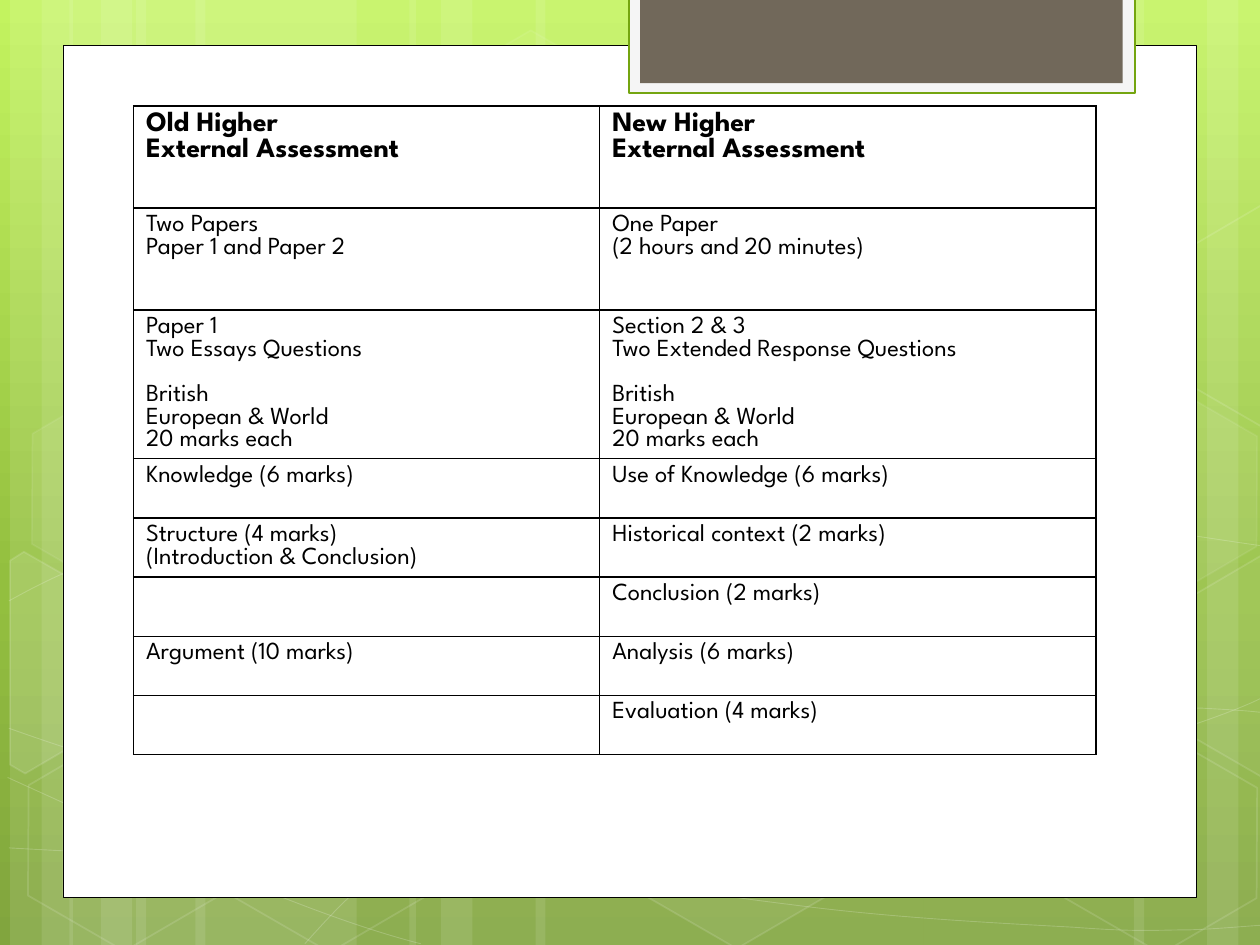
"""Build a slide that compares the old and new Higher external assessments."""
import copy
import dataclasses
import typing

import lxml.etree
import pptx
import pptx.dml.color
import pptx.enum.shapes
import pptx.oxml.ns
import pptx.util

Inches = pptx.util.Inches
Pt = pptx.util.Pt
qn = pptx.oxml.ns.qn
SHAPES = pptx.enum.shapes.MSO_SHAPE
Point = tuple[float, float]

COLOURS = {
    "white": "FFFFFF",
    "ink": "000000",
    "tab_rim": "F5F5F5",
    "tab_edge": "74A510",
    "tab": "71685A",
    "sky_top": "C3F35F",
    "sky_middle": "93BF3F",
    "sky_bottom": "81A53E",
}
FONT = "League Spartan"
WIDTH, HEIGHT = 10, 7.5
HEX_WIDTH, HEX_HEIGHT = 1.75, 1.52


@dataclasses.dataclass
class Paint:
    fill: str | None = None
    fill_alpha: int = 100
    line: str | None = None
    line_alpha: int = 100
    weight: float = 1


@dataclasses.dataclass
class Box:
    left: float
    top: float
    width: float
    height: float
    paint: Paint
    kind: typing.Any = SHAPES.RECTANGLE
    rotation: float = 0
    adjustments: tuple[float, ...] = ()


def rgb(name: str) -> pptx.dml.color.RGBColor:
    return pptx.dml.color.RGBColor.from_string(COLOURS[name])


def set_alpha(shape, query: str, percent: int) -> None:
    if percent < 100:
        for colour in shape.element.spPr.xpath(query):
            lxml.etree.SubElement(colour, qn("a:alpha")).set("val", str(percent * 1000))


def apply_paint(shape, paint: Paint) -> None:
    shape.shadow.inherit = False
    for fill, colour in ((shape.fill, paint.fill), (shape.line.fill, paint.line)):
        if colour:
            fill.solid()
            fill.fore_color.rgb = rgb(colour)
        else:
            fill.background()
    if paint.line:
        shape.line.width = Pt(paint.weight)
    set_alpha(shape, "a:solidFill/a:srgbClr", paint.fill_alpha)
    set_alpha(shape, "a:ln/a:solidFill/a:srgbClr", paint.line_alpha)


def draw_box(slide, box: Box) -> None:
    shape = slide.shapes.add_shape(
        box.kind, Inches(box.left), Inches(box.top), Inches(box.width), Inches(box.height))
    shape.rotation = box.rotation
    for index, value in enumerate(box.adjustments):
        shape.adjustments[index] = value
    apply_paint(shape, box.paint)


def draw_outline(slide, points: list[Point], paint: Paint, *, closed: bool):
    start, *rest = [(Inches(x), Inches(y)) for x, y in points]
    builder = slide.shapes.build_freeform(*start)
    builder.add_line_segments(rest, close=closed)
    shape = builder.convert_to_shape()
    apply_paint(shape, paint)
    return shape


def draw_curve(slide, knots: list[Point], paint: Paint) -> None:
    shape = draw_outline(slide, knots[::3], paint, closed=False)
    for index, straight in enumerate(shape.element.spPr.xpath(".//a:lnTo")):
        a, b, c, d = knots[3 * index:3 * index + 4]
        if a == b and c == d:
            continue
        bend = lxml.etree.Element(qn("a:cubicBezTo"))
        for x, y in (b, c, d):
            lxml.etree.SubElement(bend, qn("a:pt"), x=str(Inches(x) - shape.left),
                                  y=str(Inches(y) - shape.top))
        straight.getparent().replace(straight, bend)


def draw_background(slide) -> None:
    fill = slide.background.fill
    fill.gradient()
    fill.gradient_angle = 270
    stops = slide.element.find(".//" + qn("a:gsLst"))
    stops.append(copy.deepcopy(stops[-1]))
    levels = ((0, "sky_top"), (0.62, "sky_middle"), (1, "sky_bottom"))
    for stop, (position, colour) in zip(fill.gradient_stops, levels):
        stop.position = position
        stop.color.rgb = rgb(colour)


def write_lines(cell, lines: list[str], *, size: float, bold: bool, gap: float) -> None:
    frame = cell.text_frame
    gap_next = False
    paragraph = frame.paragraphs[0]
    paragraph.font.size = Pt(size)
    for index, line in enumerate(lines):
        if not line:
            gap_next = True
            continue
        if index:
            paragraph = frame.add_paragraph()
        run = paragraph.add_run()
        run.text = line
        run.font.name, run.font.size, run.font.bold = FONT, Pt(size), bold
        run.font.color.rgb = rgb("ink")
        if gap_next:
            paragraph.space_before = Pt(gap)
            gap_next = False


def draw_borders(cell, colour: str, weight: float) -> None:
    properties = cell._tc.get_or_add_tcPr()
    for index, side in enumerate(("lnL", "lnR", "lnT", "lnB")):
        border = lxml.etree.Element(qn(f"a:{side}"), w=str(Pt(weight)))
        solid = lxml.etree.SubElement(border, qn("a:solidFill"))
        lxml.etree.SubElement(solid, qn("a:srgbClr"), val=COLOURS[colour])
        properties.insert(index, border)


def draw_table(slide, rows: list[tuple[str, str]]) -> None:
    widths = (3.7, 3.94)
    heights = (0.81, 0.81, 1.16) + (0.47,) * 5
    table = slide.shapes.add_table(
        len(rows), len(widths), Inches(1.06), Inches(0.84),
        Inches(sum(widths)), Inches(sum(heights))).table
    table.first_row = table.horz_banding = False
    for column, width in zip(table.columns, widths):
        column.width = Inches(width)
    for index, (row, height, texts) in enumerate(zip(table.rows, heights, rows)):
        row.height = Inches(height)
        for cell, text in zip(row.cells, texts):
            cell.fill.background()
            draw_borders(cell, "ink", 1)
            header = index == 0
            write_lines(cell, text.split("\n"), size=16 if header else 14, bold=header, gap=13)


BANDS = [(1.08, 1.75), (0.08, 0.5), (0.33, 0.83), (1.55, 1.75), (0.55, 0.5), (0.8, 0.83),
         (7.33, 1.75), (9.58, 0.5), (9, 0.83), (4.25, 3.08), (3.25, 0.5), (3.5, 0.83)]
CURVES = [
    [(0.07, 6.73), (0.61, 6.76), (1.15, 6.79), (1.9, 6.78), (2.65, 6.77), (3.58, 6.75), (4.58, 6.65),
     (5.58, 6.55), (7, 6.36), (7.92, 6.17), (8.83, 5.98), (9.77, 5.68), (10.07, 5.51)],
    [(0.07, 4.77), (0.36, 4.61), (0.65, 4.46), (1.21, 4.31), (1.78, 4.16), (2.59, 3.94), (3.47, 3.87),
     (4.36, 3.8), (5.44, 3.79), (6.54, 3.87), (7.64, 3.95), (9.47, 4.26), (10.07, 4.34)],
    [(0.06, 6.17), (1.27, 6.72), (2.47, 7.27), (3.34, 7.49)],
    [(0.07, 5.78), (0.38, 5.89), (0.7, 6), (1.28, 6.16), (1.86, 6.31), (2.73, 6.56), (3.57, 6.73),
     (4.4, 6.9), (5.45, 7.08), (6.28, 7.18), (7.11, 7.29), (8, 7.33), (8.53, 7.36),
     (9.05, 7.4), (9.19, 7.38), (9.45, 7.38), (9.71, 7.37), (9.89, 7.35), (10.07, 7.34)],
    [(2.42, 7.49), (2.6, 7.29), (2.78, 7.09), (3.02, 6.91), (3.26, 6.73), (3.6, 6.53), (3.88, 6.39),
     (4.16, 6.25), (4.33, 6.19), (4.7, 6.09), (5.06, 5.99), (5.73, 5.85), (6.08, 5.78),
     (6.44, 5.71), (6.49, 5.71), (6.8, 5.69), (7.11, 5.66), (7.6, 5.63), (7.94, 5.62),
     (8.29, 5.61), (8.86, 5.62), (8.86, 5.62), (8.86, 5.62), (9.53, 5.62), (9.53, 5.62),
     (9.71, 5.63), (9.88, 5.64), (9.97, 5.65), (10.06, 5.66), (10.03, 5.65), (10.06, 5.66)],
]
HEXAGONS = [(3.34, 0.36, 4, 8), (4.97, 5.89, 6, 12), (0.11, 5.91, 0, 12), (0.14, 3.12, 7, 8),
            (1.74, 5.92, 0, 12), (7.53, 4.53, 10, 12), (8.34, 5.93, 0, 12), (8.34, 3.14, 7, 8)]
CUT_HEXAGONS = [
    (10, [(0.08, 4.45), (0.19, 4.38), (0.96, 4.82), (0.95, 5.7), (0.2, 6.14), (0.08, 6.07)]),
    (4, [(9.26, 4.85), (10.01, 4.41), (10.09, 4.46), (10.09, 6.13), (10.02, 6.17), (9.26, 5.73)]),
    (0, [(9.26, 2.07), (10.01, 1.63), (10.1, 1.68), (10.09, 3.35), (10.02, 3.39), (9.26, 2.95)]),
]
PANELS = [
    Box(0.5, 0.36, 9, 6.76, Paint("white", line="ink", weight=0.5)),
    Box(4.99, -0.02, 4.02, 0.76, Paint("tab_rim", line="tab_edge", weight=1.25)),
    Box(5.08, -0.02, 3.83, 0.68, Paint("tab")),
]
ESSAY_DETAILS = "\n\nBritish\nEuropean & World\n20 marks each"
ASSESSMENTS = [
    ("Old Higher\nExternal Assessment", "New Higher\nExternal Assessment"),
    ("Two Papers\nPaper 1 and Paper 2", "One Paper\n(2 hours and 20 minutes)"),
    ("Paper 1\nTwo Essays Questions" + ESSAY_DETAILS,
     "Section 2 & 3\nTwo Extended Response Questions" + ESSAY_DETAILS),
    ("Knowledge (6 marks)", "Use of Knowledge (6 marks)"),
    ("Structure (4 marks)\n(Introduction & Conclusion)", "Historical context (2 marks)"),
    ("", "Conclusion (2 marks)"),
    ("Argument (10 marks)", "Analysis (6 marks)"),
    ("", "Evaluation (4 marks)"),
]


def glass(fill_alpha: int, line_alpha: int) -> Paint:
    return Paint("white" if fill_alpha else None, fill_alpha, "white", line_alpha)


def main() -> None:
    deck = pptx.Presentation()
    deck.slide_width, deck.slide_height = Inches(WIDTH), Inches(HEIGHT)
    slide = deck.slides.add_slide(deck.slide_layouts[6])
    draw_background(slide)
    for left, width in BANDS:
        draw_box(slide, Box(left, 0, width, HEIGHT, Paint("white", 10)))
    for knots in CURVES:
        draw_curve(slide, knots, Paint(line="white", line_alpha=20, weight=0.5))
    for left, top, fill_alpha, line_alpha in HEXAGONS:
        draw_box(slide, Box(left, top, HEX_WIDTH, HEX_HEIGHT, glass(fill_alpha, line_alpha),
                            SHAPES.HEXAGON, 30, (0.285, 1.155)))
    for fill_alpha, points in CUT_HEXAGONS:
        draw_outline(slide, points, glass(fill_alpha, 12), closed=True)
    for panel in PANELS:
        draw_box(slide, panel)
    draw_table(slide, ASSESSMENTS)
    deck.save("out.pptx")


if __name__ == "__main__":
    main()
